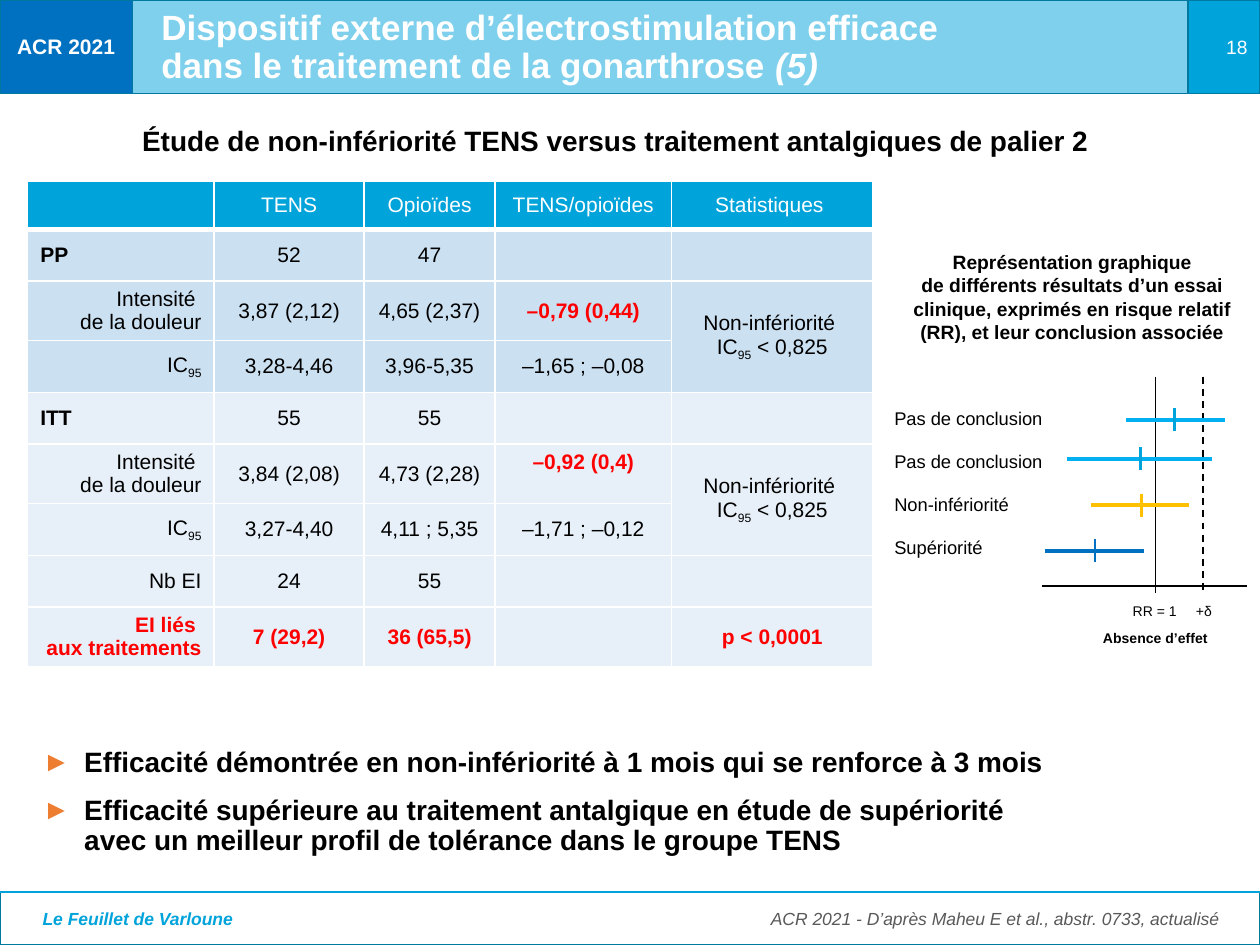
from copy import deepcopy

from lxml import etree
from pptx import Presentation
from pptx.dml.color import RGBColor
from pptx.enum.dml import MSO_LINE
from pptx.enum.shapes import MSO_CONNECTOR, MSO_SHAPE
from pptx.enum.text import MSO_ANCHOR, MSO_AUTO_SIZE, PP_ALIGN
from pptx.oxml.ns import qn
from pptx.util import Inches, Pt

LEFT, CENTER, RIGHT = PP_ALIGN.LEFT, PP_ALIGN.CENTER, PP_ALIGN.RIGHT
TOP, MIDDLE = MSO_ANCHOR.TOP, MSO_ANCHOR.MIDDLE
RECTANGLE, STRAIGHT, DASH = MSO_SHAPE.RECTANGLE, MSO_CONNECTOR.STRAIGHT, MSO_LINE.DASH
FIT_SHAPE, NO_FIT = MSO_AUTO_SIZE.SHAPE_TO_FIT_TEXT, MSO_AUTO_SIZE.NONE

WHITE = RGBColor(0xFF, 0xFF, 0xFF)
BLACK = RGBColor(0, 0, 0)
GRAY = RGBColor(0x59, 0x59, 0x59)
RED = RGBColor(0xFF, 0, 0)
ORANGE = RGBColor(0xED, 0x7D, 0x31)
AMBER = RGBColor(0xFF, 0xC0, 0)
CYAN = RGBColor(0, 0xA3, 0xDA)
SKY = RGBColor(0, 0xB0, 0xF0)
BLUE = RGBColor(0, 0x70, 0xC0)
OUTLINE = RGBColor(0, 0x79, 0xA1)
BAND_DARK = RGBColor(0xCB, 0xE0, 0xF1)
BAND_LIGHT = RGBColor(0xE7, 0xF0, 0xF8)

ALERT = {"bold": True, "color": RED}
IC95 = ["IC", ("95", {"base": -25000})]
VERDICT = ["Non-infériorité ", [*IC95, " < 0,825"]]
INTENSITY = "Intensité \vde la douleur"
HEADINGS = ["", "TENS", "Opioïdes", "TENS/opioïdes", "Statistiques "]
COLUMNS = [1.48, 1.19, 1.04, 1.4, 1.6]
ROWS = [
    ("PP", "52", "47", "", ""),
    (INTENSITY, "3,87 (2,12)", "4,65 (2,37)", "–0,79 (0,44)", VERDICT),
    (IC95, "3,28-4,46", "3,96-5,35", "–1,65 ; –0,08", ""),
    ("ITT", "55", "55", "", ""),
    (INTENSITY, "3,84 (2,08)", "4,73 (2,28)", "–0,92 (0,4)", VERDICT),
    (IC95, "3,27-4,40", "4,11 ; 5,35", "–1,71 ; –0,12", ""),
    ("Nb EI", "24", "55", "", ""),
    ("EI liés \vaux traitements", "7 (29,2)", "36 (65,5)", "", "p < 0,0001"),
]
TRIALS = [
    ("Pas de conclusion", 1.94, 2.72, 2.32, 1.39, SKY, CYAN),
    ("Pas de conclusion", 1.47, 2.62, 2.05, 1.7, SKY, CYAN),
    ("Non-infériorité", 1.66, 2.44, 2.06, 2.07, AMBER, AMBER),
    ("Supériorité", 1.29, 2.08, 1.69, 2.43, BLUE, BLUE),
]


def write(frame, paragraphs, align=LEFT, spacing=None, before=None, **fmt):
    for index, pieces in enumerate(paragraphs):
        para = frame.paragraphs[0] if index == 0 else frame.add_paragraph()
        para.alignment = align
        if spacing:
            para.line_spacing = spacing
        if before is not None:
            para.space_before = Pt(before)
        for piece in [pieces] if isinstance(pieces, str) else pieces:
            text, own = (piece, {}) if isinstance(piece, str) else piece
            look = {"size": 12, "color": BLACK, "bold": False, "italic": False, **fmt, **own}
            for number, line in enumerate(text.split("\v")):
                line_break = para._p.add_br() if number else None
                run = para.add_run()
                run.text = line
                run.font.name = "Arial"
                run.font.size = Pt(look["size"])
                run.font.bold = look["bold"]
                run.font.italic = look["italic"]
                run.font.color.rgb = look["color"]
                if "base" in look:
                    run._r.get_or_add_rPr().set("baseline", str(look["base"]))
                if line_break is not None:
                    line_break.append(deepcopy(run._r.rPr))


def add_text(slide, box, paragraphs, wrap=True, grow=False, **fmt):
    frame = slide.shapes.add_textbox(*map(Inches, box)).text_frame
    frame.word_wrap = wrap
    frame.auto_size = FIT_SHAPE if grow else NO_FIT
    write(frame, paragraphs, **fmt)
    return frame


def add_bar(slide, box, fill, text="", alpha=None, **fmt):
    bar = slide.shapes.add_shape(RECTANGLE, *map(Inches, box))
    bar.shadow.inherit = False
    bar.fill.solid()
    bar.fill.fore_color.rgb = fill
    bar.line.color.rgb = OUTLINE
    bar.line.width = Pt(0)
    if alpha:
        color = bar._element.spPr.find(f"{qn('a:solidFill')}/{qn('a:srgbClr')}")
        etree.SubElement(color, qn("a:alpha")).set("val", str(alpha))
    if text:
        bar.text_frame.vertical_anchor = MIDDLE
        write(bar.text_frame, [text], color=WHITE, **fmt)


def add_line(slide, x1, y1, x2, y2, color=BLACK, width=1, dash=None):
    line = slide.shapes.add_connector(STRAIGHT, *map(Inches, (x1, y1, x2, y2)))
    line.line.color.rgb = color
    line.line.width = Pt(width)
    if dash:
        line.line.dash_style = dash
    etree.SubElement(line._element.spPr, qn("a:effectLst"))


def build_header(slide, left, top, width, height):
    tag_width, number_width = 1.05, 0.57
    number_left = left + width - number_width
    add_bar(slide, (left + tag_width, top, width - tag_width - number_width, height), CYAN, alpha=50000)
    add_bar(slide, (left, top, tag_width, height), BLUE, "ACR 2021", align=CENTER, bold=True)
    add_bar(slide, (number_left, top, number_width, height), CYAN, "18", align=RIGHT, size=11)
    title = slide.shapes.title
    title.left, title.top, title.width, title.height = map(Inches, (left + 1.18, top + 0.04, 8.01, 0.68))
    title.text_frame.auto_size = NO_FIT
    title.text_frame.vertical_anchor = MIDDLE
    heading = ["Dispositif externe d’électrostimulation efficace \vdans le traitement de la gonarthrose ",
               ("(5)", {"italic": True})]
    write(title.text_frame, [heading], spacing=0.9, before=10, size=20, bold=True, color=WHITE)
    slide.shapes._spTree.append(title._element)


def build_footer(slide, left, top, width, height):
    add_bar(slide, (left, top, width, height), WHITE)
    add_line(slide, left, top, left + width, top, CYAN, 0.75)
    add_text(slide, (left + 0.24, top + 0.08, 3.47, 0.27), ["Le Feuillet de Varloune"],
             size=10, bold=True, italic=True, color=CYAN)
    add_text(slide, (left + 5.77, top + 0.08, 4.04, 0.27),
             ["ACR 2021 - D’après Maheu E et al., abstr. 0733, actualisé "],
             align=RIGHT, size=10, italic=True, color=GRAY)


def style_cell(cell, fill, bottom):
    properties = cell._tc.get_or_add_tcPr()
    for side, points in (("L", 1), ("R", 1), ("T", 1), ("B", bottom)):
        border = etree.SubElement(properties, qn(f"a:ln{side}"), w=str(Pt(points)))
        paint = etree.SubElement(border, qn("a:solidFill"))
        etree.SubElement(paint, qn("a:srgbClr"), val=str(WHITE))
    cell.fill.solid()
    cell.fill.fore_color.rgb = fill
    cell.vertical_anchor = MIDDLE


def build_results(slide, left, top, width, height):
    table = slide.shapes.add_table(len(ROWS) + 1, len(COLUMNS),
                                   *map(Inches, (left, top, width, height))).table
    table.horz_banding = False
    for column, column_width in zip(table.columns, COLUMNS):
        column.width = Inches(column_width)
    for r, values in enumerate([HEADINGS, *ROWS]):
        two_lines = "\v" in values[0]
        table.rows[r].height = Inches(0.37 if r == 0 else 0.47 if two_lines else 0.41)
        fill = CYAN if r == 0 else BAND_DARK if r < 4 else BAND_LIGHT
        for c, value in enumerate(values):
            cell = table.cell(r, c)
            style_cell(cell, fill, 3 if r == 0 else 1)
            group = value in ("PP", "ITT")
            align = LEFT if group else RIGHT if c == 0 else CENTER
            look = {"color": WHITE} if r == 0 else {"bold": group}
            if r == len(ROWS) or (two_lines and c == 3):
                look = ALERT
            paragraphs = value if value is VERDICT else [value]
            write(cell.text_frame, paragraphs, align=align, **look)
    for r in (2, 5):
        table.cell(r, 4).merge(table.cell(r + 1, 4))
    table.cell(5, 3).vertical_anchor = TOP


def build_forest_plot(slide, left, top, width):
    add_text(slide, (left + 0.05, top, width - 0.05, 0.84),
             ["Représentation graphique\vde différents résultats d’un essai clinique, "
              "exprimés en risque relatif (RR), et leur conclusion associée"],
             grow=True, align=CENTER, size=11, bold=True)
    add_text(slide, (left, top + 1.24, 1.44, 1.31), [trial[0] for trial in TRIALS],
             wrap=False, grow=True, before=12, size=10.5)
    for x, dash in ((2.17, None), (2.55, DASH)):
        add_line(slide, left + x, top + 1.05, left + x, top + 2.77, dash=dash)
    add_line(slide, left + 1.27, top + 2.71, left + 2.9, top + 2.71)
    for _, low, high, estimate, y, range_color, mark_color in TRIALS:
        add_line(slide, left + low, top + y, left + high, top + y, range_color, 2.25)
        add_line(slide, left + estimate, top + y - 0.09, left + estimate, top + y + 0.09, mark_color, 1.5)
    for caption, x, y, caption_width, bold in (("RR = 1", 1.89, 2.79, 0.55, False),
                                               ("+δ", 2.39, 2.79, 0.33, False),
                                               ("Absence d’effet", 1.65, 3.01, 1.04, True)):
        add_text(slide, (left + x, top + y, caption_width, 0.24), [caption],
                 wrap=False, grow=True, align=CENTER, size=8, bold=bold)


def build_conclusions(slide, left, top, width, height):
    frame = add_text(slide, (left, top, width, height),
                     ["Efficacité démontrée en non-infériorité à 1 mois qui se renforce à 3 mois",
                      "Efficacité supérieure au traitement antalgique en étude de supériorité \v"
                      "avec un meilleur profil de tolérance dans le groupe TENS"],
                     spacing=0.9, before=10, size=16, bold=True)
    indent = Inches(0.33)
    for para in frame.paragraphs:
        properties = para._p.get_or_add_pPr()
        properties.set("marL", str(indent))
        properties.set("indent", str(-indent))
        color = etree.SubElement(properties, qn("a:buClr"))
        etree.SubElement(color, qn("a:srgbClr"), val=str(ORANGE))
        etree.SubElement(properties, qn("a:buFont"), typeface="Arial")
        etree.SubElement(properties, qn("a:buChar"), char="►")


def main():
    deck = Presentation()
    deck.slide_width, deck.slide_height = Inches(10), Inches(7.5)
    slide = deck.slides.add_slide(deck.slide_layouts[5])
    build_footer(slide, 0, 7.08, 10, 0.42)
    build_header(slide, 0, 0, 10, 0.74)
    add_text(slide, (0.48, 0.96, 8.81, 0.39),
             ["Étude de non-infériorité TENS versus traitement antalgiques de palier 2"],
             align=CENTER, spacing=0.9, before=10, size=16, bold=True)
    build_results(slide, 0.22, 1.44, 6.7, 3.83)
    build_conclusions(slide, 0.24, 5.89, 9.38, 0.84)
    build_forest_plot(slide, 7, 1.94, 2.97)
    deck.save("out.pptx")


if __name__ == "__main__":
    main()
